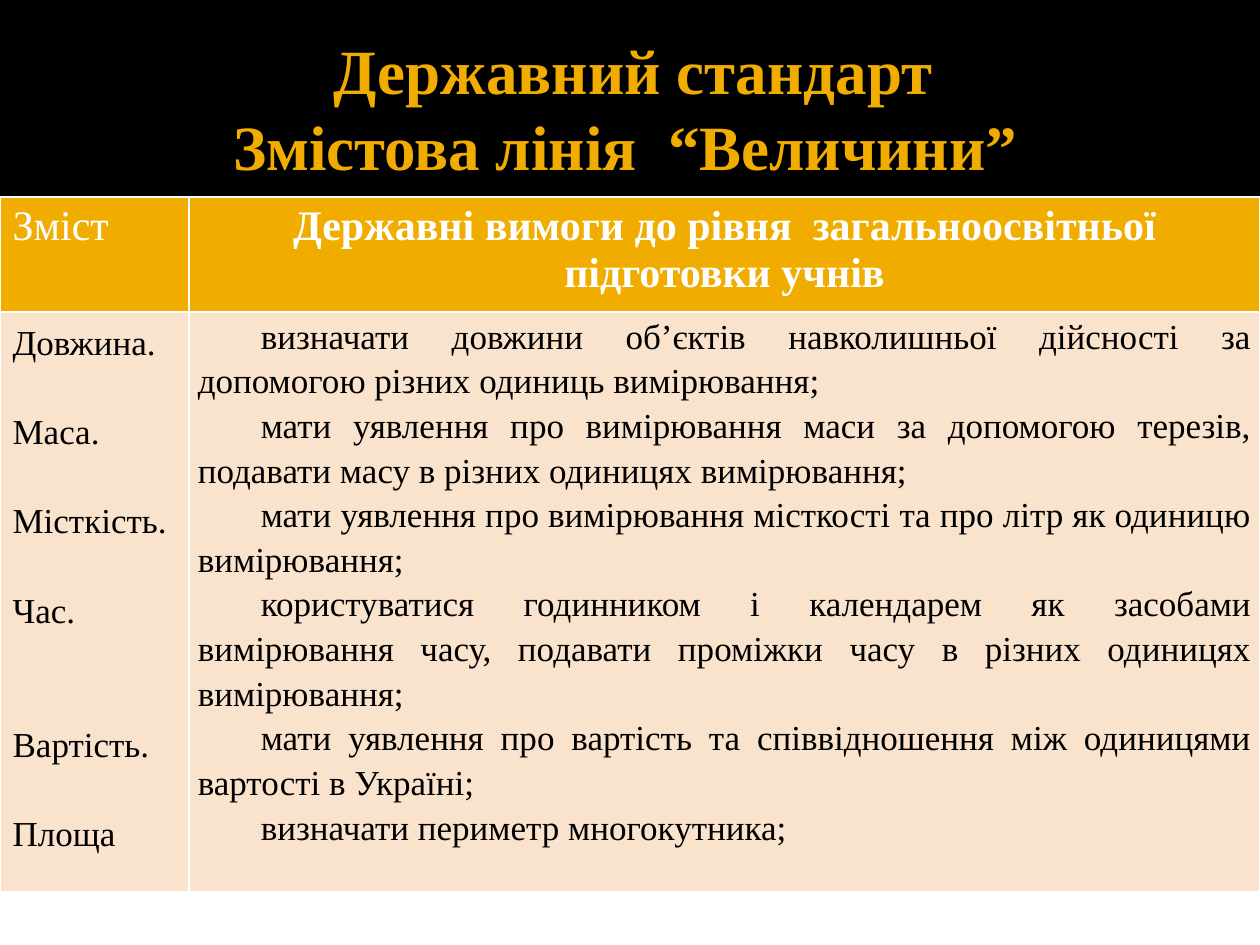
from lxml import etree
from pptx import Presentation
from pptx import util as u
from pptx.dml.color import RGBColor
from pptx.enum import shapes, text
from pptx.oxml.ns import qn

TITLE = "Державний стандарт\vЗмістова лінія  “Величини” "
HEADS = ["Зміст", "Державні вимоги до рівня  загальноосвітньої підготовки учнів"]
# topic, empty lines above it
TOPICS = [("Довжина. ", 0), ("Маса. ", 1), ("Місткість. ", 1),
          ("Час. ", 1), ("Вартість. ", 2), ("Площа", 1)]
GOALS = [
    "визначати довжини об’єктів навколишньої дійсності за допомогою різних одиниць вимірювання; ",
    "мати уявлення про вимірювання маси за допомогою терезів, подавати масу в різних одиницях вимірювання; ",
    "мати уявлення про вимірювання місткості та про літр як одиницю вимірювання; ",
    "користуватися годинником і календарем як засобами вимірювання часу, "
    "подавати проміжки часу в різних одиницях вимірювання; ",
    "мати уявлення про вартість та співвідношення між одиницями вартості в Україні; ",
    "визначати периметр многокутника; ",
]
FONT = "Times New Roman"
GOLD = RGBColor(0xF0, 0xAD, 0x00)
CREAM = RGBColor(0xF9, 0xE3, 0xCC)
WHITE = RGBColor(255, 255, 255)
BLACK = RGBColor(0, 0, 0)
COLS, ROWS = [189, 1071], [115, 580]
LINE = 25.5  # height of one body line, points
ALIGN = text.PP_ALIGN


def px(n):
    return u.Emu(round(n * 914400 / 126))


def style(para, size, color, bold=False, align=ALIGN.LEFT):
    para.alignment = align
    for run in para.runs:
        font = run.font
        font.name, font.size, font.bold = FONT, u.Pt(size), bold
        font.color.rgb = color


def band(slide, top, height, color):
    bar = slide.shapes.add_shape(shapes.MSO_SHAPE.RECTANGLE, 0, px(top), px(1260), px(height))
    bar.shadow.inherit = False
    bar.fill.solid()
    bar.fill.fore_color.rgb = color
    bar.line.fill.background()
    slide.shapes._spTree.insert(2, bar._element)  # behind the title


def paint(cell, color):
    props = cell._tc.get_or_add_tcPr()
    for side in ("lnL", "lnR", "lnT", "lnB"):
        line = etree.SubElement(props, qn("a:" + side), w=str(u.Pt(1)))
        fill = etree.SubElement(line, qn("a:solidFill"))
        etree.SubElement(fill, qn("a:srgbClr"), val=str(WHITE))
    cell.fill.solid()
    cell.fill.fore_color.rgb = color


def write(cell, lines):
    cell.text_frame.text = "\n".join(lines)
    for para in cell.text_frame.paragraphs:
        style(para, 20, BLACK, align=ALIGN.JUSTIFY)
        para.line_spacing = 1.15
    return cell.text_frame.paragraphs


def main():
    deck = Presentation()
    deck.slide_width, deck.slide_height = px(1260), px(945)
    slide = deck.slides.add_slide(deck.slide_layouts[5])

    # Title on its black band
    band(slide, 198, 6, WHITE)
    band(slide, 0, 198, BLACK)
    title = slide.shapes.title
    title.left, title.top, title.width, title.height = px(63), px(21), px(1134), px(173)
    frame = title.text_frame
    frame.text = TITLE
    frame.vertical_anchor = text.MSO_ANCHOR.MIDDLE
    frame.auto_size = text.MSO_AUTO_SIZE.NONE
    frame.margin_left = u.Inches(0.1)
    frame.margin_right = frame.margin_top = frame.margin_bottom = u.Inches(0.05)
    style(frame.paragraphs[0], 36, GOLD, True, ALIGN.CENTER)

    # Table grid
    grid = slide.shapes.add_table(2, 2, 0, px(197), px(sum(COLS)), px(sum(ROWS))).table
    for col, size in zip(grid.columns, COLS):
        col.width = px(size)
    for row, size, color in zip(grid.rows, ROWS, (GOLD, CREAM)):
        row.height = px(size)
        for cell in row.cells:
            paint(cell, color)

    # Header row
    for i, (head, align) in enumerate(zip(HEADS, (ALIGN.LEFT, ALIGN.CENTER))):
        cell = grid.cell(0, i)
        cell.text_frame.text = head
        style(cell.text_frame.paragraphs[0], 24, WHITE, i == 1, align)

    # Topics, spaced to meet their goals
    for para, (_, gap) in zip(write(grid.cell(1, 0), [t for t, _ in TOPICS]), TOPICS):
        para.space_before = u.Pt(gap * LINE)

    # Goals with a first-line indent
    cell = grid.cell(1, 1)
    cell.margin_left = cell.margin_right = u.Inches(0.07)
    cell.margin_top = cell.margin_bottom = 0
    for para in write(cell, GOALS):
        props = para._p.get_or_add_pPr()
        props.set("marL", "0")
        props.set("indent", str(u.Inches(0.5)))

    deck.save("out.pptx")


if __name__ == "__main__":
    main()
